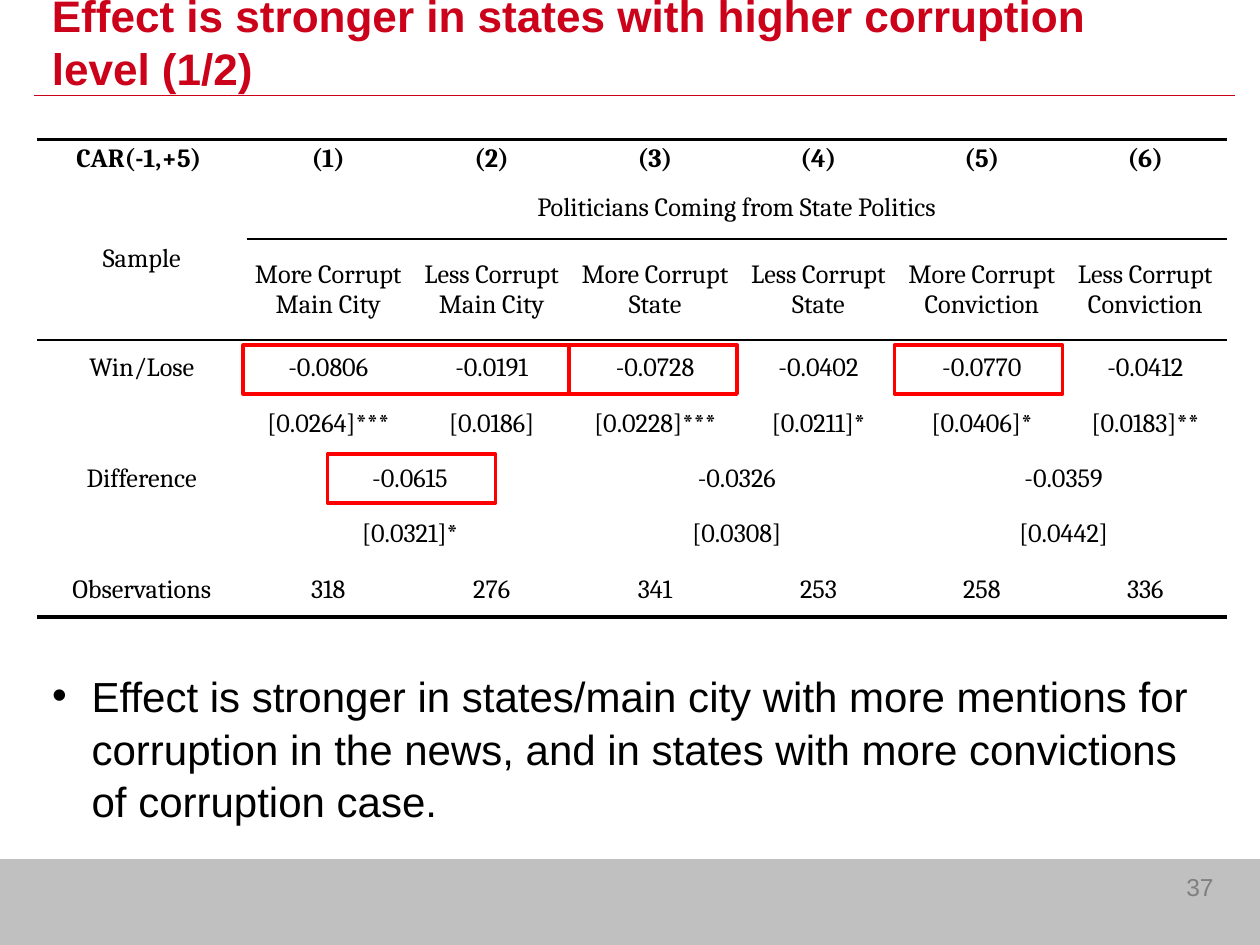
from dataclasses import dataclass

from lxml import etree
from pptx import Presentation, util as u
from pptx.dml.color import RGBColor
from pptx.enum import shapes, text
from pptx.oxml import ns

Pt = u.Pt


@dataclass(frozen=True)
class Theme:
    accent: str = "CB021A"
    ink: str = "000000"
    mark: str = "FF0000"
    band: str = "C0C0C0"
    muted: str = "7F7F7F"
    sans: str = "Arial"
    serif: str = "Cambria"
    title: float = 25.2
    body: float = 24
    cell: float = 15
    number: float = 14


THEME = Theme()

# Table content: None continues the merged cell before it
ROWS = [
    ["CAR(-1,+5) ", "(1)", "(2)", "(3)", "(4)", "(5)", "(6)"],
    ["Sample", "Politicians Coming from State Politics"] + [None] * 5,
    [None, "More Corrupt Main City", "Less Corrupt Main City", "More Corrupt State",
     "Less Corrupt State", "More Corrupt Conviction", "Less Corrupt Conviction"],
    ["Win/Lose", "-0.0806", "-0.0191", "-0.0728", "-0.0402", "-0.0770", "-0.0412"],
    ["", "[0.0264]***", "[0.0186]", "[0.0228]***", "[0.0211]*", "[0.0406]*", "[0.0183]**"],
    ["Difference", "-0.0615", None, "-0.0326", None, "-0.0359", None],
    ["", "[0.0321]*", None, "[0.0308]", None, "[0.0442]", None],
    ["Observations", "318", "276", "341", "253", "258", "336"],
]
ROW_HEIGHTS = [21, 36, 57.6] + [31.65] * 5
COLUMN_WIDTHS = [119.7] + [93.4] * 6
# Merged areas: first row, first column, last row, last column
MERGES = [(1, 0, 2, 0), (1, 1, 1, 6)] + [
    (row, column, row, column + 1) for row in (5, 6) for column in (1, 3, 5)]
# Horizontal rules: row edge -> (line width, first column)
RULES = {0: (2.25, 0), 2: (1, 1), 3: (1, 0), 8: (2.25, 0)}


def color(value):
    return RGBColor.from_string(value)


def write(frame, content, *, size, font=THEME.sans, fill=THEME.ink, bold=False,
          align=text.PP_ALIGN.LEFT, spacing=None, bullet=None, indent=0):
    para = frame.paragraphs[0]
    para.alignment = align
    if spacing:
        para.line_spacing = spacing
    if bullet:
        props = para._p.get_or_add_pPr()
        props.set("marL", str(Pt(indent)))
        props.set("indent", str(-Pt(indent)))
        etree.SubElement(props, ns.qn("a:buFont"), typeface=THEME.sans)
        etree.SubElement(props, ns.qn("a:buChar"), char=bullet)
    span = para.add_run()
    span.text = content
    span.font.name, span.font.size, span.font.bold = font, Pt(size), bold
    span.font.color.rgb = color(fill)


def add_text(page, content, left, top, width, height, *,
             anchor=text.MSO_ANCHOR.TOP, grow=False, **style):
    box = page.shapes.add_textbox(Pt(left), Pt(top), Pt(width), Pt(height))
    frame = box.text_frame
    frame.word_wrap = True
    frame.vertical_anchor = anchor
    frame.auto_size = (text.MSO_AUTO_SIZE.SHAPE_TO_FIT_TEXT if grow
                       else text.MSO_AUTO_SIZE.NONE)
    write(frame, content, **style)


def add_box(page, left, top, width, height, *, fill=None, line=None):
    box = page.shapes.add_shape(shapes.MSO_SHAPE.RECTANGLE,
                                Pt(left), Pt(top), Pt(width), Pt(height))
    box.shadow.inherit = False
    if fill:
        box.fill.solid()
        box.fill.fore_color.rgb = color(fill)
    else:
        box.fill.background()
    if line:
        box.line.color.rgb = color(line)
        box.line.width = Pt(2)
    else:
        box.line.fill.background()


def add_rule(page, left, right, top):
    rule = page.shapes.add_connector(shapes.MSO_CONNECTOR.STRAIGHT,
                                     Pt(left), Pt(top), Pt(right), Pt(top))
    rule.line.color.rgb = color(THEME.accent)
    rule.line.width = Pt(0.75)
    etree.SubElement(rule._element.spPr, ns.qn("a:effectLst"))


def set_borders(cell, top, bottom):
    props = cell._tc.get_or_add_tcPr()
    for side, width in (("L", 0), ("R", 0), ("T", top), ("B", bottom)):
        edge = etree.SubElement(props, ns.qn(f"a:ln{side}"), w=str(Pt(width)))
        if width:
            fill = etree.SubElement(edge, ns.qn("a:solidFill"))
            etree.SubElement(fill, ns.qn("a:srgbClr"), val=THEME.ink)
        else:
            etree.SubElement(edge, ns.qn("a:noFill"))


def rule_width(edge, column):
    width, first = RULES.get(edge, (0, 0))
    return width if column >= first else 0


def add_results(page, left, top):
    table = page.shapes.add_table(
        len(ROWS), len(COLUMN_WIDTHS), Pt(left), Pt(top),
        Pt(sum(COLUMN_WIDTHS)), Pt(sum(ROW_HEIGHTS))).table
    table.first_row = table.horz_banding = False
    for column, width in zip(table.columns, COLUMN_WIDTHS):
        column.width = Pt(width)
    for row, height in zip(table.rows, ROW_HEIGHTS):
        row.height = Pt(height)
    for row, column, last_row, last_column in MERGES:
        table.cell(row, column).merge(table.cell(last_row, last_column))
    for row, values in enumerate(ROWS):
        for column, value in enumerate(values):
            cell = table.cell(row, column)
            depth = cell.span_height if cell.is_merge_origin else 1
            set_borders(cell, rule_width(row, column), rule_width(row + depth, column))
            cell.fill.background()
            cell.vertical_anchor = text.MSO_ANCHOR.MIDDLE
            cell.margin_left = cell.margin_right = cell.margin_top = Pt(0.72)
            cell.margin_bottom = 0
            if value:
                write(cell.text_frame, value, size=THEME.cell, font=THEME.serif,
                      bold=row == 0, align=text.PP_ALIGN.CENTER)


def main():
    deck = Presentation()
    deck.slide_width, deck.slide_height = Pt(720), Pt(540)
    page = deck.slides.add_slide(deck.slide_layouts[6])

    # Footer band and title
    add_box(page, 0, 491, 720, 49, fill=THEME.band)
    add_rule(page, 19.6, 705.6, 54.6)
    add_text(page, "Effect is stronger in states with higher corruption level (1/2)",
             22.5, 3.6, 666, 39.6, anchor=text.MSO_ANCHOR.MIDDLE,
             size=THEME.title, fill=THEME.accent, bold=True)

    # Takeaway and page number
    add_text(page, "Effect is stronger in states/main city with more mentions for "
             "corruption in the news, and in states with more convictions of "
             "corruption case.",
             22.8, 378, 678, 51, grow=True, size=THEME.body, spacing=1.05,
             bullet="•", indent=22.5)
    add_text(page, "37", 643.7, 494.6, 56.9, 36, size=THEME.number,
             fill=THEME.muted, align=text.PP_ALIGN.RIGHT)

    # Results with the highlighted estimates
    add_results(page, 21.2, 79.7)
    for left, top, width in ((139, 197.2, 186), (325.2, 197.2, 96),
                             (511.2, 197.2, 96), (187.2, 259.4, 96)):
        add_box(page, left, top, width, 28, line=THEME.mark)

    deck.save("out.pptx")


if __name__ == "__main__":
    main()
